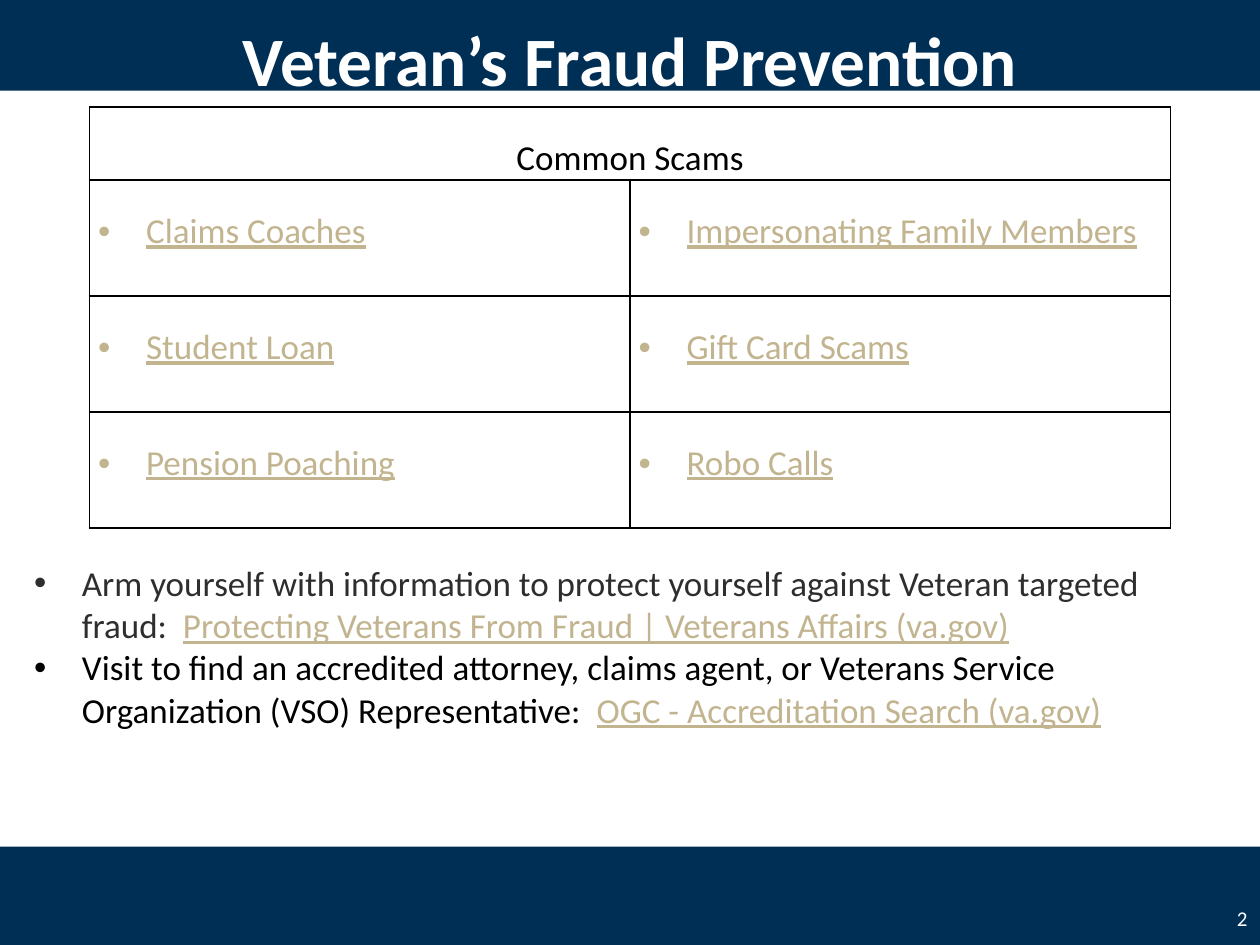
"""Build the Veteran's Fraud Prevention slide."""
from dataclasses import dataclass

from lxml import etree
from pptx import Presentation
from pptx import util as u
from pptx.dml.color import RGBColor
from pptx.enum import shapes, text
from pptx.oxml.ns import qn


@dataclass(frozen=True)
class Theme:
    """Colours, font and type sizes of the slide."""
    font: str = "Calibri"
    navy: str = "002F56"
    white: str = "FFFFFF"
    black: str = "000000"
    ink: str = "2E2E2E"
    link: str = "C2B48F"
    title: float = 39.6
    body: float = 20
    number: float = 12


T = Theme()
INDENT = 0.38
SCAMS = [("Claims Coaches", "Impersonating Family Members"),
         ("Student Loan", "Gift Card Scams"),
         ("Pension Poaching", "Robo Calls")]
ADVICE = [
    ("Arm yourself with information to protect yourself against Veteran "
     "targeted fraud:  ", T.ink,
     "Protecting Veterans From Fraud | Veterans Affairs (va.gov)"),
    ("Visit to find an accredited attorney, claims agent, or Veterans Service "
     "Organization (VSO) Representative:  ", T.black,
     "OGC - Accreditation Search (va.gov)"),
]


def apply(obj, **values):
    """Set each named attribute on an object."""
    for name, value in values.items():
        setattr(obj, name, value)


def place(sp, left, top, width, height):
    """Position a shape, in inches."""
    apply(sp, left=u.Inches(left), top=u.Inches(top),
          width=u.Inches(width), height=u.Inches(height))


def add_run(p, words, size, color, **fmt):
    """Append a formatted run to a paragraph."""
    r = p.add_run()
    r.text = words
    apply(r.font, name=T.font, size=u.Pt(size), **fmt)
    r.font.color.rgb = RGBColor.from_string(color)


def add_bullet(p):
    """Give a paragraph a hanging round bullet."""
    pPr = p._p.get_or_add_pPr()
    pPr.set("marL", str(u.Inches(INDENT)))
    pPr.set("indent", str(-u.Inches(INDENT)))
    etree.SubElement(pPr, qn("a:buFont"), typeface="Arial")
    etree.SubElement(pPr, qn("a:buChar"), char="•")


def add_band(slide, top):
    """Add a full-width navy band behind the placeholders."""
    sp = slide.shapes.add_shape(shapes.MSO_SHAPE.RECTANGLE, 0, u.Inches(top),
                                u.Inches(10), u.Inches(0.8))
    sp.shadow.inherit = False
    sp.fill.solid()
    sp.fill.fore_color.rgb = RGBColor.from_string(T.navy)
    sp.line.fill.background()
    slide.shapes.title._element.addprevious(sp._element)


def set_title(sp, words):
    """Place and fill the title, set low on its band."""
    place(sp, 0, -0.08, 10, 0.8)
    tf = sp.text_frame
    apply(tf, vertical_anchor=text.MSO_ANCHOR.TOP, word_wrap=True,
          auto_size=text.MSO_AUTO_SIZE.NONE,
          margin_top=u.Inches(0.22), margin_bottom=0)
    p = tf.paragraphs[0]
    p.alignment = text.PP_ALIGN.CENTER
    add_run(p, words, T.title, T.white, bold=True)


def style_cell(cell):
    """Clear a cell's fill and draw thin black borders."""
    apply(cell, margin_left=u.Inches(0.07), margin_right=u.Inches(0.07),
          margin_top=0, margin_bottom=0)
    tcPr = cell._tc.get_or_add_tcPr()
    for side in ("lnL", "lnR", "lnT", "lnB"):
        ln = etree.SubElement(tcPr, qn(f"a:{side}"), w=str(u.Pt(1)))
        fill = etree.SubElement(ln, qn("a:solidFill"))
        etree.SubElement(fill, qn("a:srgbClr"), val=T.black)
    cell.fill.background()


def add_scam_table(slide):
    """Add the table of common scams under one merged heading."""
    frame = slide.shapes.add_table(len(SCAMS) + 1, 2, u.Inches(0.71),
                                   u.Inches(0.85), u.Inches(8.58), u.Inches(3.34))
    table = frame.table
    apply(table, first_row=False, horz_banding=False)
    for i, row in enumerate(table.rows):
        row.height = u.Inches(0.92 if i else 0.58)
        for cell in row.cells:
            style_cell(cell)
    table.cell(0, 0).merge(table.cell(0, 1))
    p = table.cell(0, 0).text_frame.paragraphs[0]
    apply(p, alignment=text.PP_ALIGN.CENTER, line_spacing=1.7)
    add_run(p, "Common Scams", T.body, T.black)
    for i, names in enumerate(SCAMS, 1):
        for j, name in enumerate(names):
            p = table.cell(i, j).text_frame.paragraphs[0]
            p.line_spacing = 1.7
            add_bullet(p)
            add_run(p, name, T.body, T.link, underline=True)


def set_advice(sp):
    """Place and fill the bulleted advice."""
    place(sp, 0.17, 4.41, 9.42, 2.3)
    tf = sp.text_frame
    apply(tf, word_wrap=True, auto_size=text.MSO_AUTO_SIZE.NONE,
          vertical_anchor=text.MSO_ANCHOR.TOP)
    for i, (words, color, source) in enumerate(ADVICE):
        p = tf.add_paragraph() if i else tf.paragraphs[0]
        p.space_before = u.Pt(0)
        add_bullet(p)
        add_run(p, words, T.body, color)
        add_run(p, source, T.body, T.link, underline=True)


def add_page_number(slide, number):
    """Add the page number at the lower right."""
    sp = slide.shapes.add_textbox(u.Inches(9.58), u.Inches(7.09),
                                  u.Inches(0.42), u.Inches(0.4))
    tf = sp.text_frame
    apply(tf, word_wrap=True, vertical_anchor=text.MSO_ANCHOR.MIDDLE)
    p = tf.paragraphs[0]
    p.alignment = text.PP_ALIGN.RIGHT
    add_run(p, number, T.number, T.white)


def main():
    """Build and save the slide."""
    prs = Presentation()
    apply(prs, slide_width=u.Inches(10), slide_height=u.Inches(7.5))
    slide = prs.slides.add_slide(prs.slide_layouts[1])
    for top in (6.72, -0.08):
        add_band(slide, top)
    set_title(slide.shapes.title, "Veteran’s Fraud Prevention")
    add_scam_table(slide)
    set_advice(slide.placeholders[1])
    add_page_number(slide, "2")
    prs.save("out.pptx")


if __name__ == "__main__":
    main()
